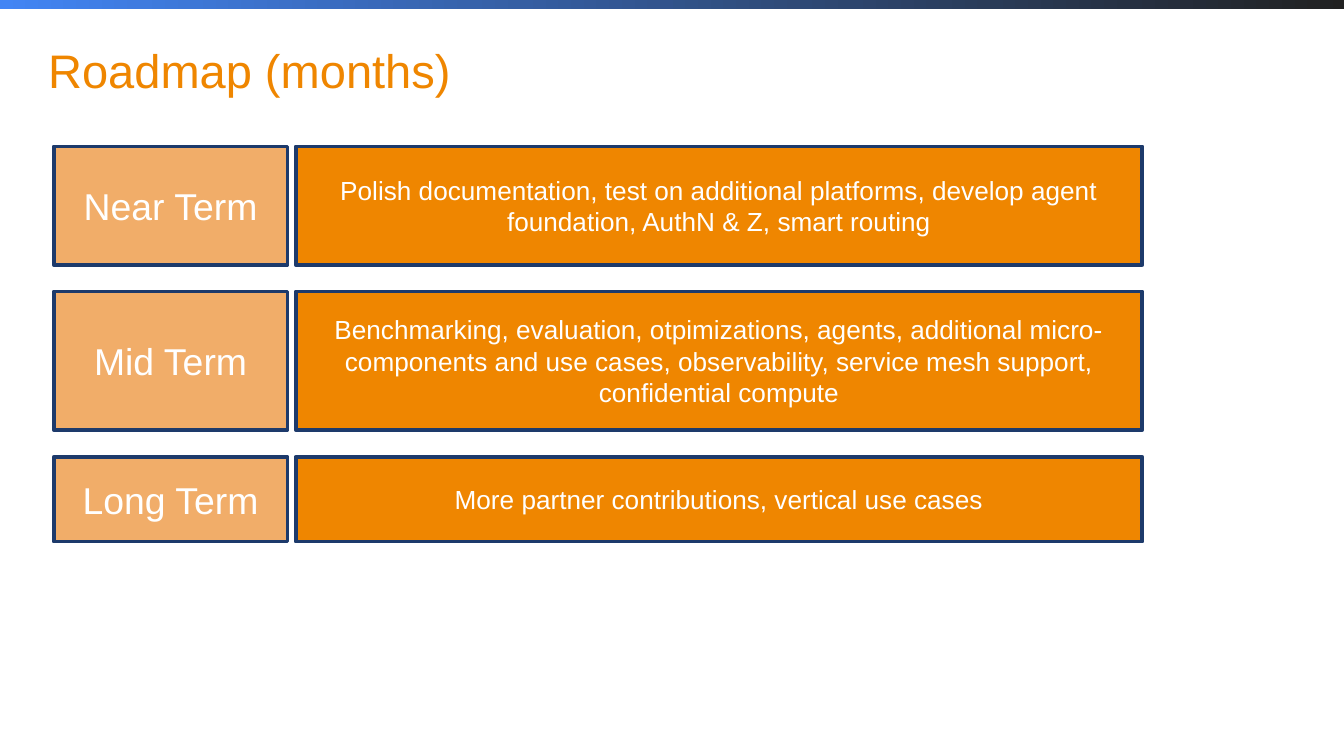
from typing import NamedTuple

from pptx import Presentation
from pptx.dml.color import RGBColor
from pptx.enum.shapes import MSO_SHAPE as Shape
from pptx.enum.text import MSO_ANCHOR as Anchor, PP_ALIGN as Align
from pptx.util import Inches, Pt

COLORS = {
    "orange": "EF8600",
    "peach": "F1AD69",
    "navy": "1D3A6B",
    "white": "FFFFFF",
    "blue": "4285F4",
    "black": "212121",
}
FONT = "Arial"
TOP, GAP = 1.09, 0.2
TERM_LEFT, TERM_WIDTH = 0.4, 1.74
GOALS_LEFT, GOALS_WIDTH = 2.2, 6.3


class Phase(NamedTuple):
    term: str
    goals: str
    height: float


PHASES = [
    Phase("Near Term",
          "Polish documentation, test on additional platforms, develop agent "
          "foundation, AuthN & Z, smart routing", 0.88),
    Phase("Mid Term",
          "Benchmarking, evaluation, otpimizations, agents, additional "
          "micro-components and use cases, observability, service mesh support, "
          "confidential compute", 1.03),
    Phase("Long Term", "More partner contributions, vertical use cases", 0.63),
]


def rgb(name: str) -> RGBColor:
    return RGBColor.from_string(COLORS[name])


def add_run(p, text: str, size: float, color: str) -> None:
    r = p.add_run()
    r.text = text
    r.font.name = FONT
    r.font.size = Pt(size)
    r.font.color.rgb = rgb(color)


def add_rect(s, left: float, top: float, width: float, height: float):
    sp = s.shapes.add_shape(Shape.RECTANGLE, Inches(left), Inches(top),
                            Inches(width), Inches(height))
    sp.shadow.inherit = False
    return sp


def add_top_band(s) -> None:
    sp = add_rect(s, 0, 0, 10.01, 0.07)
    sp.line.fill.background()
    sp.fill.gradient()
    sp.fill.gradient_angle = 0
    for stop, color, position in zip(sp.fill.gradient_stops, ("blue", "black"), (0, 1)):
        stop.color.rgb = rgb(color)
        stop.position = position


def add_title(s, text: str) -> None:
    tf = s.shapes.add_textbox(Inches(0.26), Inches(0.21), Inches(9.5), Inches(0.63)).text_frame
    tf.word_wrap = True
    tf.margin_left = tf.margin_right = tf.margin_top = tf.margin_bottom = Inches(0.1)
    add_run(tf.paragraphs[0], text, 25.2, "orange")


def add_box(s, left: float, top: float, width: float, height: float,
            text: str, size: float, fill: str) -> None:
    sp = add_rect(s, left, top, width, height)
    sp.fill.solid()
    sp.fill.fore_color.rgb = rgb(fill)
    sp.line.color.rgb = rgb("navy")
    sp.line.width = Pt(2)
    tf = sp.text_frame
    tf.word_wrap = True
    tf.vertical_anchor = Anchor.MIDDLE
    p = tf.paragraphs[0]
    p.alignment = Align.CENTER
    add_run(p, text, size, "white")


def main() -> None:
    prs = Presentation()
    prs.slide_width = Inches(10)
    prs.slide_height = prs.slide_width * 9 // 16
    s = prs.slides.add_slide(prs.slide_layouts[6])
    add_top_band(s)
    add_title(s, "Roadmap (months)")
    top = TOP
    for phase in PHASES:
        add_box(s, TERM_LEFT, top, TERM_WIDTH, phase.height, phase.term, 20, "peach")
        add_box(s, GOALS_LEFT, top, GOALS_WIDTH, phase.height, phase.goals, 14, "orange")
        top += phase.height + GAP
    prs.save("out.pptx")


if __name__ == "__main__":
    main()
